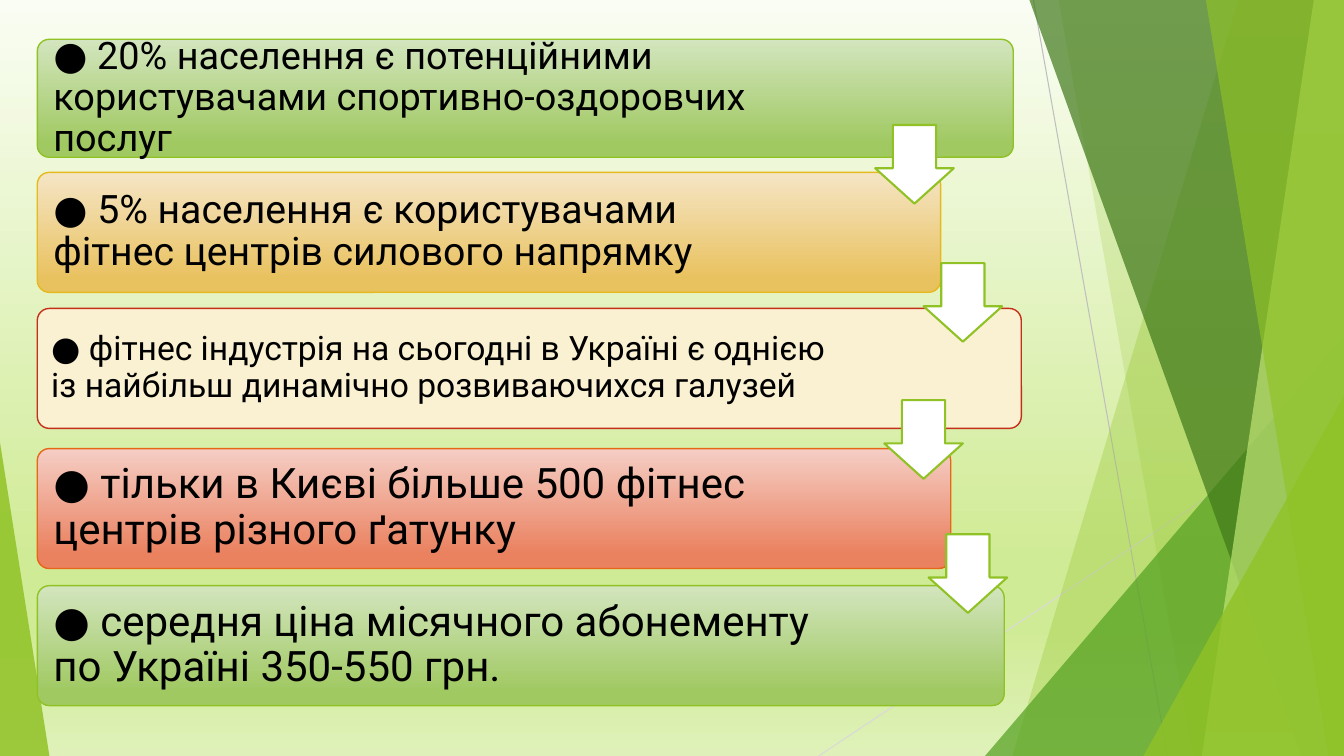
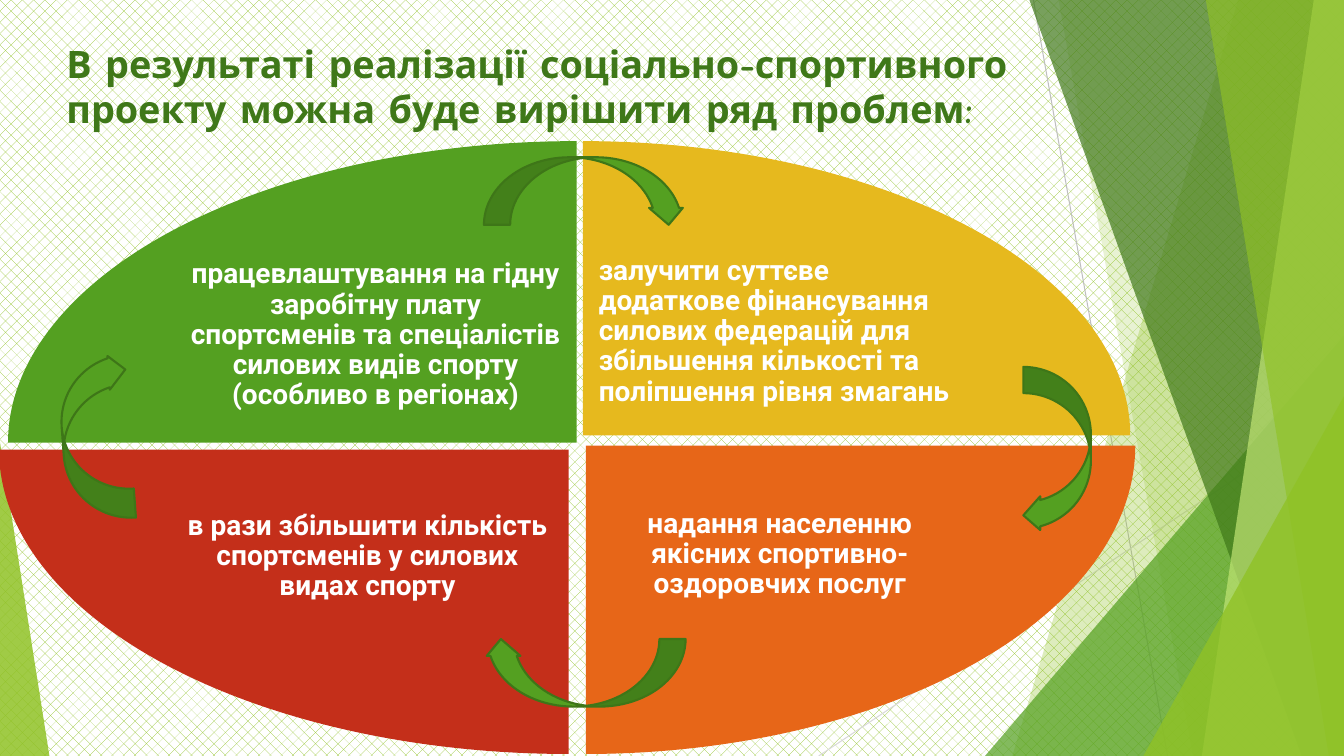
import copy

import lxml.etree
import pptx
import pptx.dml.color
import pptx.enum.dml
import pptx.enum.shapes
import pptx.enum.text
import pptx.oxml.ns
import pptx.util

COLORS = {
    "lime": "90C226",
    "green": "54A021",
    "dark_green": "3F7819",
    "arrow_line": "3E7618",
    "pale_lime": "C0E474",
    "yellow": "E6B91E",
    "orange": "E76618",
    "red": "C42F1A",
    "cream": "FAF1D2",
    "white": "FFFFFF",
    "black": "000000",
    "gray": "BFBFBF",
    "light_gray": "D9D9D9",
}
BACKGROUND_STOPS = [(0, "FAFDF3"), (0.74, "D0EB96"), (0.83, "D0EB96"), (1, "DFF1B9")]
GREEN_STOPS = [(0, "D3E5BE"), (0.88, "A0C962")]
YELLOW_STOPS = [(0, "F5E5C5"), (0.88, "E9C260")]
RED_STOPS = [(0, "F5CEC5"), (0.88, "EA815F")]

WIDTH, HEIGHT = 13.33, 7.5
BODY_FONT = "Roboto"
TITLE_FORMAT = {"name": "Comic Neue", "size": pptx.util.Pt(27), "bold": True}
WEDGE_FORMAT = {"name": BODY_FONT, "size": pptx.util.Pt(20), "bold": True}

SHAPES = pptx.enum.shapes.MSO_SHAPE
ALIGN = pptx.enum.text.PP_ALIGN
ANCHOR = pptx.enum.text.MSO_ANCHOR

DECOR_LINES = [
    ((10.25, 0), (11.58, HEIGHT), "gray"),
    ((WIDTH, 4.03), (8.12, HEIGHT), "light_gray"),
]
DECOR_PANELS = [
    ("band", 12.28, 10.04, "lime", 30),
    ("band", 10.5, 11.83, "lime", 20),
    ("triangle", (9.77, 3.33, 3.56, 4.17), 1, "green", 72),
    ("band", 10.21, 12.91, "dark_green", 70),
    ("band", 13.03, 11.92, "pale_lime", 70),
    ("band", 11.96, 13.18, "lime", 65),
    ("triangle", (11.34, 3.93, 1.99, 3.57), 1, "lime", 80),
    ("triangle", (0, 4.39, 0.49, 3.11), 0, "lime", 85),
]

STEPS = [
    (0.39, 9.68, 8.16, GREEN_STOPS, "lime", 27, 0.12,
     "20% населення є потенційними користувачами спортивно-оздоровчих послуг"),
    (1.71, 8.96, 7.45, YELLOW_STOPS, "yellow", 28, 0.12,
     "5% населення є користувачами фітнес центрів силового напрямку"),
    (3.06, 9.76, 8.12, None, "red", 24, 0.1,
     "фітнес індустрія на сьогодні в Україні є однією із найбільш динамічно "
     "розвиваючихся галузей"),
    (4.45, 9.06, 7.54, RED_STOPS, "orange", 30, 0.12,
     "тільки в Києві більше 500 фітнес центрів різного ґатунку"),
    (5.81, 9.59, 7.98, GREEN_STOPS, "lime", 30, 0.12,
     "середня ціна місячного абонементу по Україні 350-550 грн."),
]
STEP_ARROWS = [(8.68, 1.24), (9.16, 2.61), (8.77, 3.97), (9.21, 5.3)]

WEDGES = [
    ((0.08, 1.4, 5.64, 2.99), 0, "green", (1.73, 2.27, 3.99, 2.11), ALIGN.CENTER,
     "працевлаштування на гідну заробітну плату спортсменів та спеціалістів "
     "силових видів спорту (особливо в регіонах)"),
    ((5.78, 1.4, 5.43, 2.92), 90, "yellow", (5.78, 2.26, 3.84, 2.06), ALIGN.LEFT,
     "залучити суттєве додаткове фінансування силових федерацій для збільшення "
     "кількості та поліпшення рівня змагань"),
    ((5.81, 4.42, 5.45, 3.06), 180, "orange", (5.81, 4.42, 3.85, 2.16), ALIGN.CENTER,
     "надання населенню якісних спортивно-оздоровчих послуг"),
    ((-0.01, 4.46, 5.65, 3.02), 270, "red", (1.65, 4.45, 3.99, 2.14), ALIGN.CENTER,
     "в рази збільшити кількість спортсменів у силових видах спорту"),
]
CYCLE_ARROWS = [
    ((10.15, 3.64, 0.67, 1.64), 0, 0.389),
    ((0.62, 3.52, 0.67, 1.64), 175.9, 0.431),
    ((4.8, 1.56, 2, 0.67), 270, 0.389),
    ((4.8, 6.34, 2, 0.67), 90, 0.389),
]


def rgb(value):
    return pptx.dml.color.RGBColor.from_string(COLORS.get(value, value))


def inches(values):
    return [pptx.util.Inches(value) for value in values]


def apply_format(target, values):
    for name, value in values.items():
        setattr(target, name, value)


def paint_solid(shape, color, opacity=100):
    shape.fill.solid()
    shape.fill.fore_color.rgb = rgb(color)
    if opacity < 100:
        color_element = next(shape.element.iter(pptx.oxml.ns.qn("a:srgbClr")))
        lxml.etree.SubElement(
            color_element, pptx.oxml.ns.qn("a:alpha"), val=str(opacity * 1000)
        )


def paint_gradient(fill, owner, stops):
    fill.gradient()
    fill.gradient_angle = 270
    stop_list = next(owner.element.iter(pptx.oxml.ns.qn("a:gsLst")))
    while len(stop_list) < len(stops):
        stop_list.append(copy.deepcopy(stop_list[0]))
    for stop, (position, color) in zip(fill.gradient_stops, stops):
        stop.position = position
        stop.color.rgb = rgb(color)


def draw_outline(shape, color=None, width=1):
    if color is None:
        shape.line.fill.background()
    else:
        shape.line.color.rgb = rgb(color)
        shape.line.width = pptx.util.Pt(width)


def add_preset(slide, kind, box, rotation=0, adjustments=()):
    left, top, width, height = box
    if rotation % 180 == 90:
        left, top = left + (width - height) / 2, top + (height - width) / 2
        width, height = height, width
    shape = slide.shapes.add_shape(kind, *inches((left, top, width, height)))
    shape.shadow.inherit = False
    shape.rotation = rotation
    for index, value in enumerate(adjustments):
        shape.adjustments[index] = value
    return shape


def add_text(slide, box, runs, color, inset, anchor=ANCHOR.MIDDLE,
             alignment=ALIGN.LEFT, spacing=0.9):
    frame = slide.shapes.add_textbox(*inches(box)).text_frame
    apply_format(frame, {"word_wrap": True, "vertical_anchor": anchor})
    if inset is not None:
        sides = ("left", "top", "right", "bottom")
        margin = pptx.util.Inches(inset)
        apply_format(frame, {f"margin_{side}": margin for side in sides})
    paragraph = frame.paragraphs[0]
    apply_format(paragraph, {"alignment": alignment, "line_spacing": spacing})
    for text, font_format in runs:
        run = paragraph.add_run()
        run.text = text
        apply_format(run.font, font_format)
        run.font.color.rgb = rgb(color)


def add_line(slide, start, end, color):
    connector = slide.shapes.add_connector(
        pptx.enum.shapes.MSO_CONNECTOR.STRAIGHT, *inches(start + end)
    )
    lxml.etree.SubElement(
        connector.element.spPr, pptx.oxml.ns.qn("a:effectLst")
    )
    draw_outline(connector, color, 0.75)
    return connector


def add_band(slide, top_left, bottom_left):
    corners = [(top_left, 0), (WIDTH, 0), (WIDTH, HEIGHT), (bottom_left, HEIGHT)]
    points = [inches(corner) for corner in corners]
    builder = slide.shapes.build_freeform(*points[0])
    builder.add_line_segments(points[1:], close=True)
    band = builder.convert_to_shape()
    band.shadow.inherit = False
    return band


def move_decor_to_layout(slide):
    decor = [add_line(slide, *line) for line in DECOR_LINES]
    for kind, first, second, color, opacity in DECOR_PANELS:
        if kind == "band":
            panel = add_band(slide, first, second)
        else:
            panel = add_preset(
                slide, SHAPES.ISOSCELES_TRIANGLE, first, adjustments=[second]
            )
        paint_solid(panel, color, opacity)
        draw_outline(panel)
        decor.append(panel)
    for shape in decor:
        slide.slide_layout.shapes.element.append(shape.element)


def add_step(slide, top, width, text_width, stops, line, size, inset, text):
    height = 1.17 if top < 1 else 1.19
    bar = add_preset(
        slide, SHAPES.ROUNDED_RECTANGLE, (0.37, top, width, height), adjustments=[0.1]
    )
    if stops:
        paint_gradient(bar.fill, bar, stops)
    else:
        paint_solid(bar, "cream")
    draw_outline(bar, line)
    runs = [
        (part, {"name": BODY_FONT, "size": pptx.util.Pt(points)})
        for part, points in (("● ", max(size, 28) if size == 27 else size), (text, size))
    ]
    add_text(slide, (0.41, top + 0.03, text_width, height - 0.07), runs, "black", inset)


def add_step_arrow(slide, left, top):
    arrow = add_preset(
        slide, SHAPES.DOWN_ARROW, (left, top, 0.78, 0.78), adjustments=[0.55, 0.45]
    )
    paint_solid(arrow, "white")
    draw_outline(arrow, "lime", 1.5)


def add_wedge(slide, box, rotation, color, text_box, alignment, text):
    wedge = add_preset(slide, SHAPES.PIE_WEDGE, box, rotation)
    paint_solid(wedge, color)
    draw_outline(wedge)
    add_text(slide, text_box, [(text, WEDGE_FORMAT)], "white", 0.16, alignment=alignment)


def add_cycle_arrow(slide, box, rotation, thickness):
    arrow = add_preset(
        slide, SHAPES.CURVED_LEFT_ARROW, box, rotation, [thickness, 0.5, 0.25]
    )
    paint_solid(arrow, "green")
    draw_outline(arrow, "arrow_line", 1.5)


def build_market_slide(slide):
    paint_gradient(slide.background.fill, slide, BACKGROUND_STOPS)
    for step in STEPS:
        add_step(slide, *step)
    for position in STEP_ARROWS:
        add_step_arrow(slide, *position)


def build_results_slide(slide):
    fill = slide.background.fill
    fill.patterned()
    fill.pattern = pptx.enum.dml.MSO_PATTERN.PERCENT_25
    fill.fore_color.rgb = rgb("lime")
    fill.back_color.rgb = rgb("white")
    title = "В результаті реалізації соціально-спортивного проекту можна буде вирішити ряд проблем:"
    add_text(slide, (0.56, 0.35, 10.15, 1.27), [(title, TITLE_FORMAT)],
             "dark_green", None, ANCHOR.TOP, spacing=1.0)
    for wedge in WEDGES:
        add_wedge(slide, *wedge)
    for arrow in CYCLE_ARROWS:
        add_cycle_arrow(slide, *arrow)


def main():
    presentation = pptx.Presentation()
    presentation.slide_width, presentation.slide_height = inches((WIDTH, HEIGHT))
    blank_layout = presentation.slide_layouts[6]
    market_slide = presentation.slides.add_slide(blank_layout)
    move_decor_to_layout(market_slide)
    build_market_slide(market_slide)
    build_results_slide(presentation.slides.add_slide(blank_layout))
    presentation.save("out.pptx")


if __name__ == "__main__":
    main()
